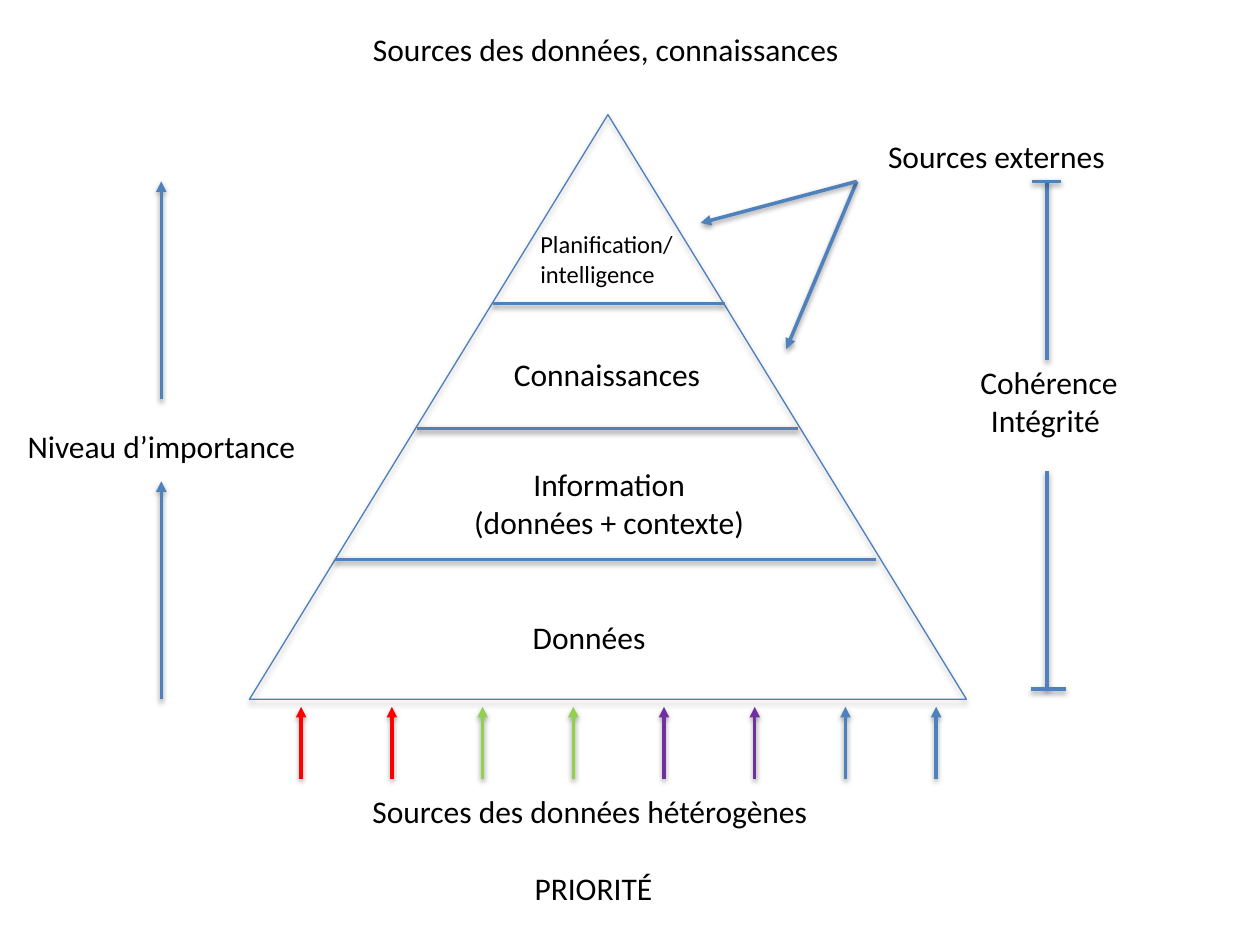
from dataclasses import dataclass

from lxml import etree
from pptx import Presentation
from pptx.dml.color import RGBColor
from pptx.enum.shapes import MSO_CONNECTOR, MSO_SHAPE
from pptx.enum.text import MSO_ANCHOR, MSO_AUTO_SIZE, PP_ALIGN
from pptx.oxml.ns import qn
from pptx.util import Inches, Pt

STRAIGHT = MSO_CONNECTOR.STRAIGHT
TRIANGLE = MSO_SHAPE.ISOSCELES_TRIANGLE
LEFT, CENTER = PP_ALIGN.LEFT, PP_ALIGN.CENTER
TOP = MSO_ANCHOR.TOP
FIT = MSO_AUTO_SIZE.SHAPE_TO_FIT_TEXT

BLUE = RGBColor(0x4F, 0x81, 0xBD)
EDGE = RGBColor(0x4B, 0x7E, 0xBC)
RED = RGBColor(0xFF, 0x00, 0x00)
GREEN = RGBColor(0x92, 0xD0, 0x50)
PURPLE = RGBColor(0x70, 0x30, 0xA0)
BLACK = RGBColor(0x00, 0x00, 0x00)
FONT = "Calibri"


@dataclass
class Label:
    lines: list[str]
    left: float
    top: float
    width: float
    height: float
    size: int = 18
    align: PP_ALIGN = LEFT
    gap: float = 0  # points between paragraphs


@dataclass
class Stroke:
    x1: float
    y1: float
    x2: float
    y2: float
    color: RGBColor = BLUE
    arrow: bool = False


TITLE = Label(["Sources des données, connaissances"], 2.86, 0.19, 3.94, 0.4)

LABELS = [
    Label(["Données"], 4.13, 4.86, 1.17, 0.4),
    Label(["Information", "(données + contexte)"], 3.65, 3.64, 2.37, 0.71, align=CENTER),
    Label(["Connaissances"], 3.98, 2.77, 1.7, 0.4),
    Label(["Planification/", "intelligence"], 4.19, 1.77, 1.27, 0.57, size=14),
    Label(["Sources des données hétérogènes ", "PRIORITÉ"],
          2.77, 6.24, 3.88, 1.01, align=CENTER, gap=22),
    Label(["Niveau d’importance"], 0.12, 3.34, 2.35, 0.4),
    Label(["Sources externes"], 6.95, 1.04, 1.94, 0.4),
    Label(["Cohérence", "Intégrité "], 7.67, 2.83, 1.31, 0.71, align=CENTER),
]

LEVELS = [
    Stroke(2.66, 4.44, 6.95, 4.44),
    Stroke(3.31, 3.4, 6.33, 3.4),
    Stroke(3.91, 2.41, 5.75, 2.41),
]
FEEDS = [
    Stroke(2.39 + 0.72 * i, 6.18, 2.39 + 0.72 * i, 5.61, color, True)
    for i, color in enumerate([RED, RED, GREEN, GREEN, PURPLE, PURPLE, BLUE, BLUE])
]
RISE = [Stroke(1.28, y, 1.28, y - 1.73, arrow=True) for y in (5.55, 3.17)]
OUTER = [Stroke(6.8, 1.44, x, y, arrow=True) for x, y in ((6.24, 2.77), (5.56, 1.77))]
RANGE = [
    Stroke(8.31, 1.44, 8.31, 2.86),
    Stroke(8.19, 1.44, 8.42, 1.44),
    Stroke(8.31, 3.74, 8.31, 5.47),
    Stroke(8.18, 5.47, 8.46, 5.47),
]


def add_shadow(shape, dist: float, alpha: int) -> None:
    """Cast a soft black shadow downwards; dist in points, alpha in percent."""
    effects = etree.SubElement(shape._element.spPr, qn("a:effectLst"))
    outer = etree.SubElement(effects, qn("a:outerShdw"), blurRad=str(Pt(3.1)),
                             dist=str(Pt(dist)), dir="5400000", rotWithShape="0")
    color = etree.SubElement(outer, qn("a:srgbClr"), val="000000")
    etree.SubElement(color, qn("a:alpha"), val=str(alpha * 1000))


def add_stroke(slide, item: Stroke) -> None:
    ends = [Inches(v) for v in (item.x1, item.y1, item.x2, item.y2)]
    line = slide.shapes.add_connector(STRAIGHT, *ends)
    line.line.color.rgb = item.color
    line.line.width = Pt(2)
    if item.arrow:
        etree.SubElement(line.line._get_or_add_ln(), qn("a:tailEnd"), type="triangle")
    add_shadow(line, 1.6, 38)


def fill_label(shape, item: Label) -> None:
    """Place a text shape and write its lines."""
    shape.left, shape.top = Inches(item.left), Inches(item.top)
    shape.width, shape.height = Inches(item.width), Inches(item.height)
    frame = shape.text_frame
    frame.word_wrap = False
    frame.auto_size = FIT
    frame.vertical_anchor = TOP
    for i, text in enumerate(item.lines):
        para = frame.add_paragraph() if i else frame.paragraphs[0]
        para.alignment = item.align
        para.space_before = Pt(item.gap if i else 0)
        run = para.add_run()
        run.text = text
        run.font.name = FONT
        run.font.size = Pt(item.size)
        run.font.color.rgb = BLACK


def add_label(slide, item: Label) -> None:
    place = [Inches(v) for v in (item.left, item.top, item.width, item.height)]
    fill_label(slide.shapes.add_textbox(*place), item)


def add_pyramid(slide) -> None:
    shape = slide.shapes.add_shape(
        TRIANGLE, Inches(1.98), Inches(0.91), Inches(5.69), Inches(4.64))
    shape.fill.background()
    shape.line.color.rgb = EDGE
    shape.line.width = Pt(0.75)
    add_shadow(shape, 1.8, 35)


def main() -> None:
    deck = Presentation()
    deck.slide_width, deck.slide_height = Inches(10), Inches(7.5)
    slide = deck.slides.add_slide(deck.slide_layouts[5])
    fill_label(slide.shapes.title, TITLE)
    add_pyramid(slide)
    for stroke in LEVELS + FEEDS + RISE + OUTER + RANGE:
        add_stroke(slide, stroke)
    for label in LABELS:
        add_label(slide, label)
    deck.save("out.pptx")


if __name__ == "__main__":
    main()
